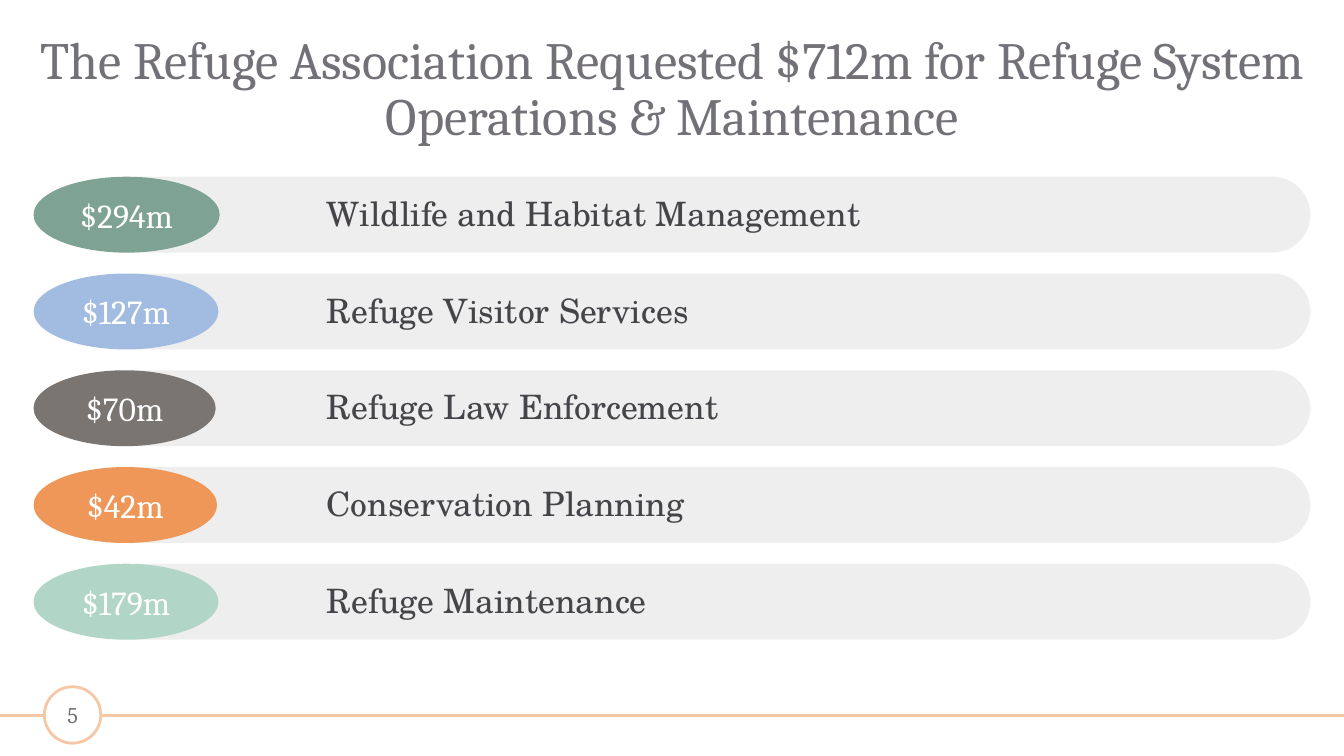
from pptx import Presentation
from pptx.dml.color import RGBColor
from pptx.enum.shapes import MSO_CONNECTOR, MSO_SHAPE
from pptx.enum.text import MSO_ANCHOR, MSO_AUTO_SIZE, PP_ALIGN
from pptx.oxml.ns import qn
from pptx.util import Pt
from lxml import etree

OVAL, PILL = MSO_SHAPE.OVAL, MSO_SHAPE.ROUNDED_RECTANGLE
LINE = MSO_CONNECTOR.STRAIGHT
TOP, MIDDLE = MSO_ANCHOR.TOP, MSO_ANCHOR.MIDDLE
LEFT, CENTER = PP_ALIGN.LEFT, PP_ALIGN.CENTER
FIXED = MSO_AUTO_SIZE.NONE

PX = 4572  # 200 px to the inch
THEME = {
    "head": "Cambria", "body": "TeX Gyre Schola",
    "title": 28, "text": 18, "number": 12, "rule": 1.5,
    "gray": "737077", "dark": "464449", "white": "FFFFFF", "peach": "F5C7A5",
    "bar_alpha": 9,
}


def add_shape(parent, kind, box, color):
    shape = parent.shapes.add_shape(kind, *(n * PX for n in box))
    shape.shadow.inherit = False
    shape.fill.solid()
    shape.fill.fore_color.rgb = RGBColor.from_string(color)
    shape.line.fill.background()
    return shape


def write(shape, text, font, size, color, align=CENTER, anchor=MIDDLE,
          insets=(0, 0, 0, 0), spacing=1.0):
    """Put one formatted run in the shape; insets are left, top, right, bottom."""
    frame = shape.text_frame
    frame.word_wrap = True
    frame.auto_size = FIXED
    frame.vertical_anchor = anchor
    (frame.margin_left, frame.margin_top,
     frame.margin_right, frame.margin_bottom) = (n * PX for n in insets)
    para = frame.paragraphs[0]
    para.alignment = align
    para.line_spacing = spacing
    run = para.add_run()
    run.text = text
    run.font.name = font
    run.font.size = Pt(size)
    run.font.color.rgb = RGBColor.from_string(color)
    return para


prs = Presentation()
prs.slide_width, prs.slide_height = 2000 * PX, 1125 * PX
slide = prs.slides.add_slide(prs.slide_layouts[5])
peach = RGBColor.from_string(THEME["peach"])

# Footer rule and page number
rule = slide.shapes.add_connector(LINE, 0, 1065 * PX, 2000 * PX, 1065 * PX)
rule.line.color.rgb = peach
rule.line.width = Pt(THEME["rule"])
etree.SubElement(rule._element.spPr, qn("a:effectLst"))

badge = add_shape(slide, OVAL, (66, 1022, 84, 84), THEME["white"])
badge.line.color.rgb = peach
badge.line.width = Pt(THEME["rule"])
write(badge, "5", THEME["head"], THEME["number"], THEME["gray"])

# Title
title = slide.shapes.title
title.left, title.top, title.width, title.height = (
    n * PX for n in (50, 51, 1900, 160))
write(title, "The Refuge Association Requested $712m for Refuge System "
      "Operations & Maintenance", THEME["head"], THEME["title"],
      THEME["gray"], anchor=TOP, spacing=0.9)

# Budget rows: amount, purpose, oval colour, oval width, oval side inset
rows = [
    ("$294m", "Wildlife and Habitat Management", "7EA293", 277, 0),
    ("$127m", "Refuge Visitor Services", "A2BBE0", 275, 20),
    ("$70m", "Refuge Law Enforcement", "7B7572", 271, 20),
    ("$42m", "Conservation Planning", "EE9759", 273, 20),
    ("$179m", "Refuge Maintenance", "B1D5C6", 275, 20),
]
for i, (amount, purpose, color, width, side) in enumerate(rows):
    top = 263 + 144 * i
    group = slide.shapes.add_group_shape()

    bar = add_shape(group, PILL, (150, top, 1800, 113), THEME["dark"])
    bar.adjustments[0] = 0.5
    tint = bar._element.spPr.find(qn("a:solidFill"))[0]
    etree.SubElement(tint, qn("a:alpha"), val=str(THEME["bar_alpha"] * 1000))
    para = write(bar, purpose, THEME["body"], THEME["text"], THEME["dark"],
                 align=LEFT, insets=(20, 10, 20, 4), spacing=0.8)
    props = para._p.get_or_add_pPr()
    props.set("marL", str(200 * PX))
    props.set("indent", str(100 * PX))

    oval = add_shape(group, OVAL, (50, top, width, 113), color)
    write(oval, amount, THEME["head"], THEME["text"], THEME["white"],
          insets=(side, 10, side, 10))

prs.save("out.pptx")
